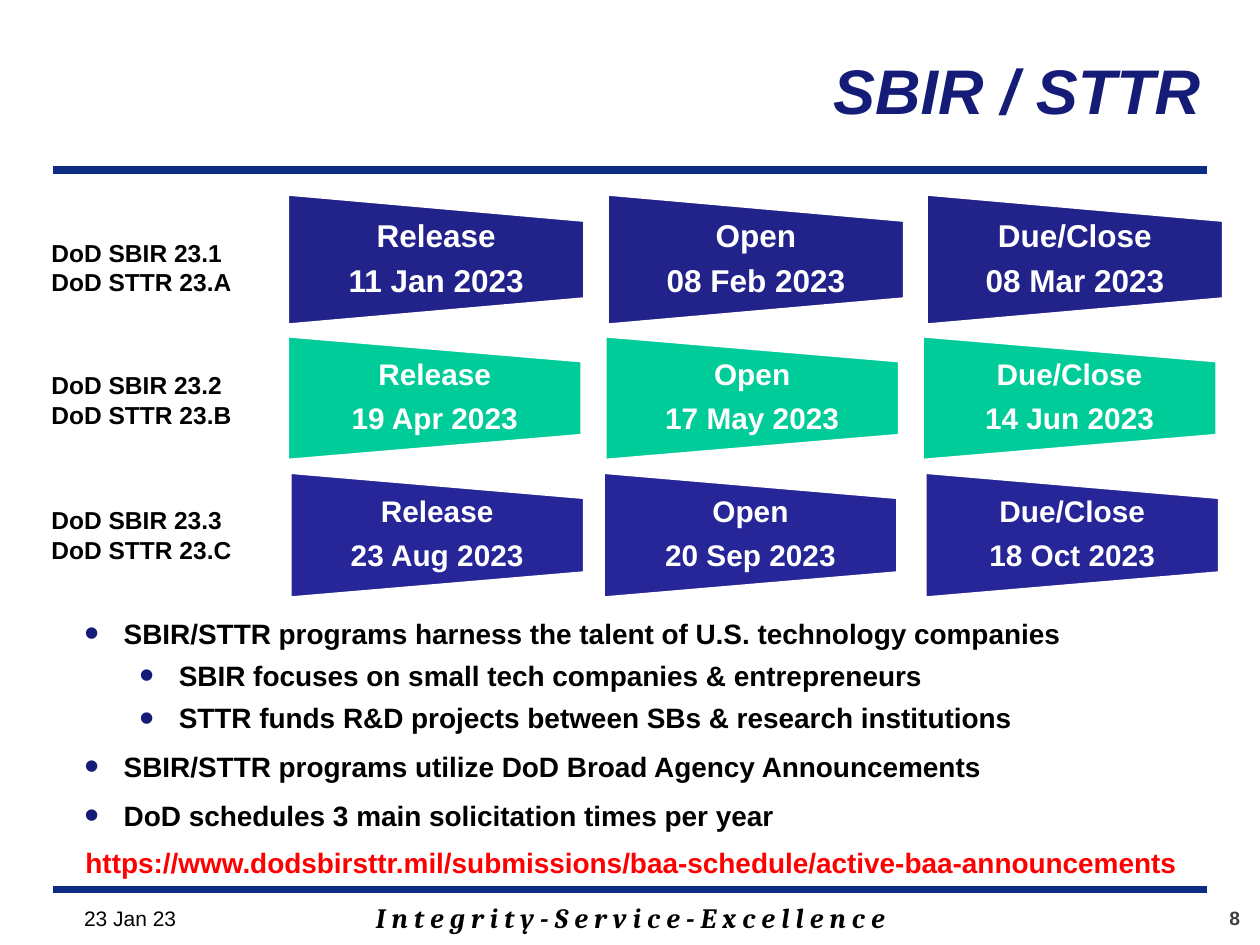
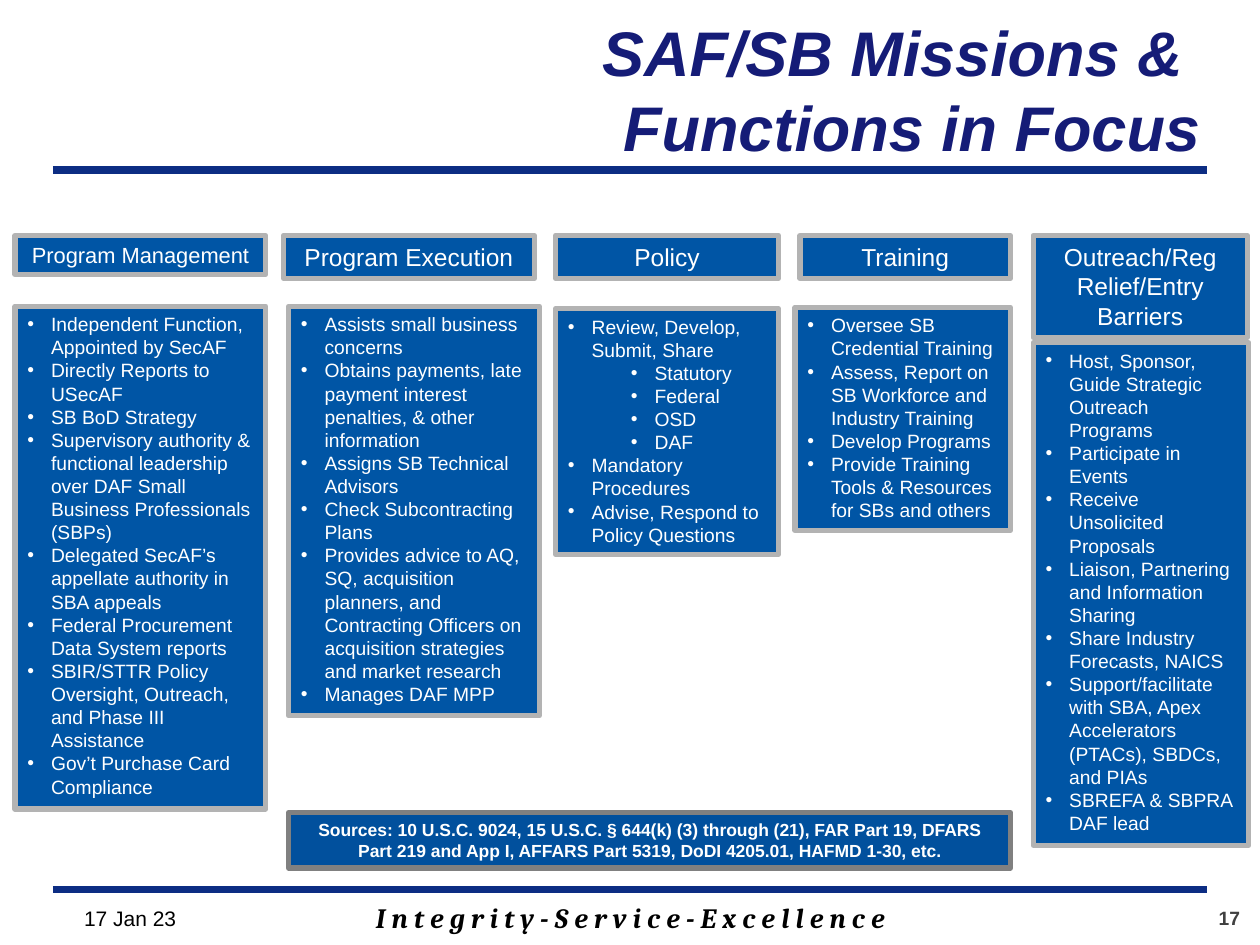
from lxml.etree import SubElement
from pptx import Presentation
from pptx.dml.color import RGBColor
from pptx.enum.shapes import MSO_CONNECTOR, MSO_SHAPE
from pptx.enum.text import MSO_ANCHOR, MSO_AUTO_SIZE, PP_ALIGN
from pptx.oxml.ns import qn
from pptx.util import Pt

NAVY, BAND, BLUE, SOURCE_BLUE = "151C77", "0C2D83", "0055A5", "01509D"
WHITE, BLACK, RED, DARK_GRAY = "FFFFFF", "000000", "FF0000", "404040"
SILVER, GRAY = "B3B3B3", "808080"
LEFT, CENTER, RIGHT = PP_ALIGN.LEFT, PP_ALIGN.CENTER, PP_ALIGN.RIGHT
TITLE_AND_BODY, TITLE_ONLY = 1, 5

CYCLES = [
    ("23.1", "23.A", "22228B", 18, 148.3, (170, 75), 132.5, [
        (164.2, "Release", "11 Jan 2023"),
        (347, "Open", "08 Feb 2023"),
        (529.2, "Due/Close", "08 Mar 2023")]),
    ("23.2", "23.B", "00CC99", 17, 227.5, (168.5, 71.3), 208, [
        (164.2, "Release", "19 Apr 2023"),
        (345.6, "Open", "17 May 2023"),
        (527, "Due/Close", "14 Jun 2023")]),
    ("23.3", "23.C", "262699", 17, 305.8, (168.5, 72), 285.1, [
        (165.6, "Release", "23 Aug 2023"),
        (344.6, "Open", "20 Sep 2023"),
        (528.5, "Due/Close", "18 Oct 2023")]),
]

PROGRAM_POINTS = [
    "SBIR/STTR programs harness the talent of U.S. technology companies",
    ("SBIR focuses on small tech companies & entrepreneurs",
     "STTR funds R&D projects between SBs & research institutions"),
    "SBIR/STTR programs utilize DoD Broad Agency Announcements",
    "DoD schedules 3 main solicitation times per year",
]

MISSIONS = [
    ("Program Management", 12.5, (8.6, 134.6, 143.3, 22.3), (8.6, 175, 143.3, 287.3), [
        "Independent Function, Appointed by SecAF",
        "Directly Reports to USecAF",
        "SB BoD Strategy",
        "Supervisory authority & functional leadership over DAF Small "
        "Business Professionals (SBPs)",
        "Delegated SecAF’s appellate authority in SBA appeals",
        "Federal Procurement Data System reports",
        "SBIR/STTR Policy Oversight, Outreach, and Phase III Assistance",
        "Gov’t Purchase Card Compliance"]),
    ("Program Execution", 14, (162, 134.6, 143.3, 24.5), (164.9, 175, 143.3, 234), [
        "Assists small business concerns",
        "Obtains payments, late payment interest penalties, & other information",
        "Assigns SB Technical Advisors",
        "Check Subcontracting Plans",
        "Provides advice to AQ, SQ, acquisition planners, and Contracting "
        "Officers on acquisition strategies and market research",
        "Manages DAF MPP"]),
    ("Policy", 14, (317.5, 134.6, 127.4, 24.5), (317.5, 176.4, 127.4, 140.4), [
        "Review, Develop, Submit, Share",
        ("Statutory", "Federal", "OSD", "DAF"),
        "Mandatory Procedures",
        "Advise, Respond to Policy Questions"]),
    ("Training", 14, (457.2, 134.6, 120.2, 24.5), (454.3, 175.7, 123.1, 127.4), [
        "Oversee SB Credential Training",
        "Assess, Report on SB Workforce and Industry Training",
        "Develop Programs",
        "Provide Training Tools & Resources for SBs and others"]),
    ("Outreach/Reg Relief/Entry Barriers", 14, (590.4, 134.6, 122.4, 58.3),
     (590.4, 195.8, 123.1, 287.3), [
        "Host, Sponsor, Guide Strategic Outreach Programs",
        "Participate in Events",
        "Receive Unsolicited Proposals",
        "Liaison, Partnering and Information Sharing",
        "Share Industry Forecasts, NAICS",
        "Support/facilitate with SBA, Apex Accelerators (PTACs), SBDCs, and PIAs",
        "SBREFA & SBPRA DAF lead"]),
]

SOURCES = ("Sources: 10 U.S.C. 9024, 15 U.S.C. § 644(k) (3) through (21), FAR Part 19, "
           "DFARS Part 219 and App I, AFFARS Part 5319, DoDI 4205.01, HAFMD 1-30, etc.")


def color(value):
    return RGBColor.from_string(value)


def points(*lengths):
    return [Pt(length) for length in lengths]


def flatten(items):
    for item in items:
        if isinstance(item, tuple):
            yield from ((1, text) for text in item)
        else:
            yield 0, item


class Briefing:
    def __init__(self):
        self.deck = Presentation()
        self.deck.slide_width, self.deck.slide_height = points(720, 540)
        self.page = None

    def add_page(self, layout, title, date, number):
        self.page = self.deck.slides.add_slide(self.deck.slide_layouts[layout])
        self.band(508.3)
        self.band(97.2)
        self.text((30.2, 511.2, 660.2, 26.6),
                  ["I n t e g r i t y - S e r v i c e - E x c e l l e n c e"], 16, BLACK,
                  CENTER, bold=True, italic=True, name="Cambria")
        self.text((682.6, 517.7, 33.1, 13.7), [str(number)], 11, DARK_GRAY, RIGHT,
                  bold=True, margins=(7.2, 0), anchor=MSO_ANCHOR.MIDDLE)
        self.text((41, 514.1, 80, 21.6), [date], 12, BLACK)
        box = self.place(self.page.shapes.title, (131, 5.8, 562.3, 90))
        self.fill_text(box, [title], 36, NAVY, RIGHT, bold=True, italic=True,
                       anchor=MSO_ANCHOR.MIDDLE)

    def band(self, top):
        line = self.page.shapes.add_connector(
            MSO_CONNECTOR.STRAIGHT, *points(30.2, top, 689.8, top))
        line.line.color.rgb = color(BAND)
        line.line.width = Pt(4.5)
        SubElement(line._element.spPr, qn("a:effectLst"))

    def place(self, box, area):
        box.left, box.top, box.width, box.height = points(*area)
        return box

    def shape(self, kind, area, fill, line, width):
        box = self.page.shapes.add_shape(kind, *points(*area))
        box.shadow.inherit = False
        box.fill.solid()
        box.fill.fore_color.rgb = color(fill)
        box.line.color.rgb = color(line)
        box.line.width = Pt(width)
        return box

    def text(self, area, lines, *style, **options):
        box = self.page.shapes.add_textbox(*points(*area))
        self.fill_text(box, lines, *style, **options)

    def panel(self, area, items, size, align=LEFT, fill=BLUE, line=SILVER, **options):
        box = self.shape(MSO_SHAPE.RECTANGLE, area, fill, line, 3)
        self.fill_text(box, items, size, WHITE, align, **options)

    def body(self, area, items, size, **options):
        box = self.place(self.page.placeholders[1], area)
        self.fill_text(box, items, size, BLACK, bold=True, **options)

    def fill_text(self, box, items, size, ink, align=LEFT, bold=False, italic=False,
                  name="Arial", anchor=MSO_ANCHOR.TOP, margins=(7.2, 3.6),
                  before=(0, 0), after=0, spacing=1, indents=None,
                  hanging=13.5, bullet_ink=None):
        frame = box.text_frame
        frame.word_wrap = True
        frame.auto_size = MSO_AUTO_SIZE.NONE
        frame.vertical_anchor = anchor
        frame.margin_left = frame.margin_right = Pt(margins[0])
        frame.margin_top = frame.margin_bottom = Pt(margins[1])
        for index, (level, text) in enumerate(flatten(items)):
            para = frame.add_paragraph() if index else frame.paragraphs[0]
            para.text = text
            para.level = level
            para.alignment = align
            para.line_spacing = spacing
            para.space_before = Pt(before[level] if index else 0)
            para.space_after = Pt(after)
            if indents:
                self.bullet(para, indents[level], hanging, bullet_ink)
            font = para.font
            font.name, font.size = name, Pt(size)
            font.bold, font.italic = bold, italic
            font.color.rgb = color(ink)

    def bullet(self, para, indent, hanging, ink):
        properties = para._p.get_or_add_pPr()
        properties.set("marL", str(Pt(indent)))
        properties.set("indent", str(Pt(-hanging)))
        if ink:
            tint = SubElement(properties, qn("a:buClr"))
            SubElement(tint, qn("a:srgbClr"), val=ink)
            SubElement(properties, qn("a:buSzPct"), val="150000")
        SubElement(properties, qn("a:buFont"), typeface="Arial")
        SubElement(properties, qn("a:buChar"), char="•")

    def milestone(self, left, middle, width, height, lines, fill, size):
        area = (left + (width - height) / 2, middle - width / 2, height, width)
        arrow = self.shape(MSO_SHAPE.FLOWCHART_MANUAL_OPERATION, area, fill, WHITE, 2)
        arrow.rotation = 270
        self.text((left, middle - 22.5, width, 45), lines, size, WHITE, CENTER,
                  bold=True, anchor=MSO_ANCHOR.MIDDLE, margins=(8.6, 0),
                  spacing=0.9, after=6.5)


def add_schedule(briefing):
    briefing.add_page(TITLE_AND_BODY, "SBIR / STTR", "23 Jan 23", 8)
    for sbir, sttr, fill, size, middle, extent, label_top, milestones in CYCLES:
        for left, *lines in milestones:
            briefing.milestone(left, middle, *extent, lines, fill, size)
        briefing.text((22.3, label_top, 145, 41), [f"DoD SBIR {sbir}", f"DoD STTR {sttr}"],
                      14, BLACK, bold=True)
    briefing.body((41, 348.5, 585.4, 138.2), PROGRAM_POINTS, 16, before=(8.7, 5),
                  indents=(22.5, 54), hanging=22.5, bullet_ink=NAVY)
    briefing.text((38.9, 479.5, 643.7, 26.6),
                  ["https://www.dodsbirsttr.mil/submissions/baa-schedule/active-baa-announcements"],
                  16, RED, CENTER, bold=True)


def add_missions(briefing):
    briefing.add_page(TITLE_ONLY, "SAF/SB Missions & \vFunctions in Focus", "17 Jan 23", 17)
    for heading, size, heading_area, list_area, duties in MISSIONS:
        briefing.panel(heading_area, [heading], size, CENTER)
        briefing.panel(list_area, duties, 11, indents=(13.5, 49.5))
    briefing.panel((164.9, 464.4, 412.6, 31.7), [SOURCES], 10, CENTER,
                   SOURCE_BLUE, GRAY, bold=True)


def main():
    briefing = Briefing()
    add_schedule(briefing)
    add_missions(briefing)
    briefing.deck.save("out.pptx")


if __name__ == "__main__":
    main()
